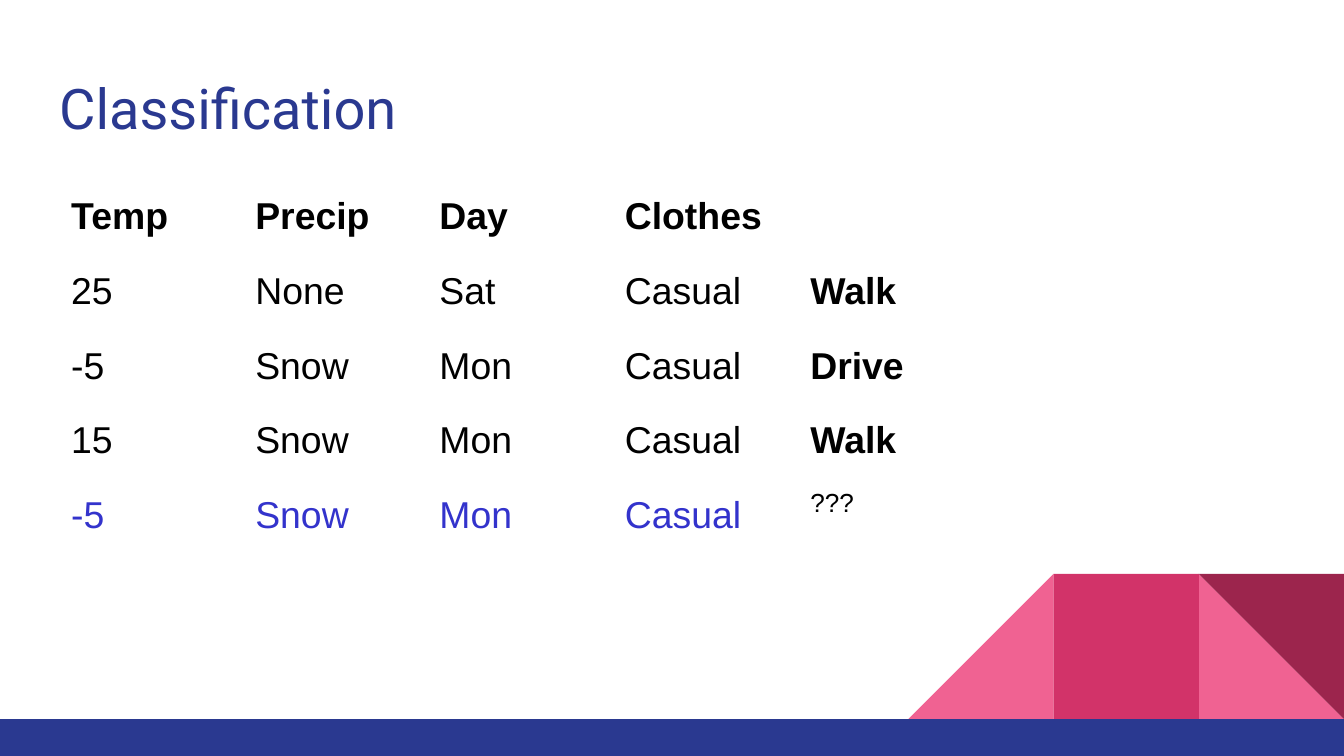
from dataclasses import dataclass

from pptx import Presentation
from pptx.dml.color import RGBColor as Color
from pptx.enum.shapes import MSO_SHAPE as Shape
from pptx.enum.text import MSO_ANCHOR as Anchor, PP_ALIGN as Align
from pptx.util import Inches, Pt


@dataclass(frozen=True)
class Theme:
    navy: str = "2A3990"
    pink: str = "F06292"
    rose: str = "D23369"
    wine: str = "9C254D"
    ink: str = "000000"
    query: str = "3333CC"
    title_font: str = "Roboto"
    body_font: str = "Arial"
    title_size: int = 30
    body_size: int = 20
    small_size: int = 14


theme = Theme()


def add_span(para, text, font, size, color, bold=False):
    span = para.add_run()
    span.text = text
    span.font.name = font
    span.font.size = Pt(size)
    span.font.bold = bold
    span.font.color.rgb = Color.from_string(color)


deck = Presentation()
deck.slide_width = Inches(10)
deck.slide_height = deck.slide_width * 9 // 16
page = deck.slides.add_slide(deck.slide_layouts[5])

side = 1.08
bar_top = 5.35
tile_top = bar_top - side
right_tile = 10 - side
decorations = [
    (Shape.RIGHT_TRIANGLE, right_tile, tile_top, side, side, theme.pink, 0, False),
    (Shape.RIGHT_TRIANGLE, right_tile - 2 * side, tile_top, side, side, theme.pink, 0, True),
    (Shape.RECTANGLE, right_tile - side, tile_top, side, side, theme.rose, 0, False),
    (Shape.RIGHT_TRIANGLE, right_tile, tile_top, side, side, theme.wine, 180, False),
    (Shape.RECTANGLE, 0, bar_top, 10, 0.28, theme.navy, 0, False),
]
for kind, left, top, width, height, color, turn, mirrored in decorations:
    box = page.shapes.add_shape(kind, Inches(left), Inches(top), Inches(width), Inches(height))
    box.shadow.inherit = False
    box.fill.solid()
    box.fill.fore_color.rgb = Color.from_string(color)
    box.line.fill.background()
    box.rotation = turn
    if mirrored:
        box._element.spPr.xfrm.set("flipH", "1")

title = page.shapes.title
title.left, title.top = Inches(0.34), Inches(0.45)
title.width, title.height = Inches(9.32), Inches(0.66)
frame = title.text_frame
frame.word_wrap = True
frame.vertical_anchor = Anchor.TOP
frame.margin_left = frame.margin_right = Inches(0.1)
frame.margin_top = frame.margin_bottom = Inches(0.1)
para = frame.paragraphs[0]
para.alignment = Align.LEFT
add_span(para, "Classification", theme.title_font, theme.title_size, theme.navy)

rows = [
    ("Temp", "Precip", "Day", "Clothes", ""),
    ("25", "None", "Sat", "Casual", "Walk"),
    ("-5", "Snow", "Mon", "Casual", "Drive"),
    ("15", "Snow", "Mon", "Casual", "Walk"),
    ("-5", "Snow", "Mon", "Casual", "???"),
]
widths = [1.37, 1.37, 1.38, 1.38, 1.38]
row_height = 0.46
holder = page.shapes.add_table(
    len(rows), len(widths), Inches(0.43), Inches(1.31),
    Inches(sum(widths)), Inches(row_height * len(rows)),
)
table = holder.table
table.first_row = table.horz_banding = False
table._tbl.tblPr.find("{*}tableStyleId").text = "{2D5ABB26-0587-4C30-8999-92F81FD0307C}"
for column, width in zip(table.columns, widths):
    column.width = Inches(width)

for r, words in enumerate(rows):
    table.rows[r].height = Inches(row_height)
    for c, word in enumerate(words):
        cell = table.cell(r, c)
        cell.fill.background()
        cell.margin_left = cell.margin_right = Inches(0.1)
        cell.margin_top = cell.margin_bottom = Inches(0.1)
        if not word:
            continue
        para = cell.text_frame.paragraphs[0]
        if word == "???":
            add_span(para, word, theme.body_font, theme.small_size, theme.ink)
            continue
        para.line_spacing = 1.15
        para.space_before = Pt(5)
        color = theme.query if r == len(rows) - 1 else theme.ink
        bold = r == 0 or c == len(words) - 1
        add_span(para, word, theme.body_font, theme.body_size, color, bold)

deck.save("out.pptx")
